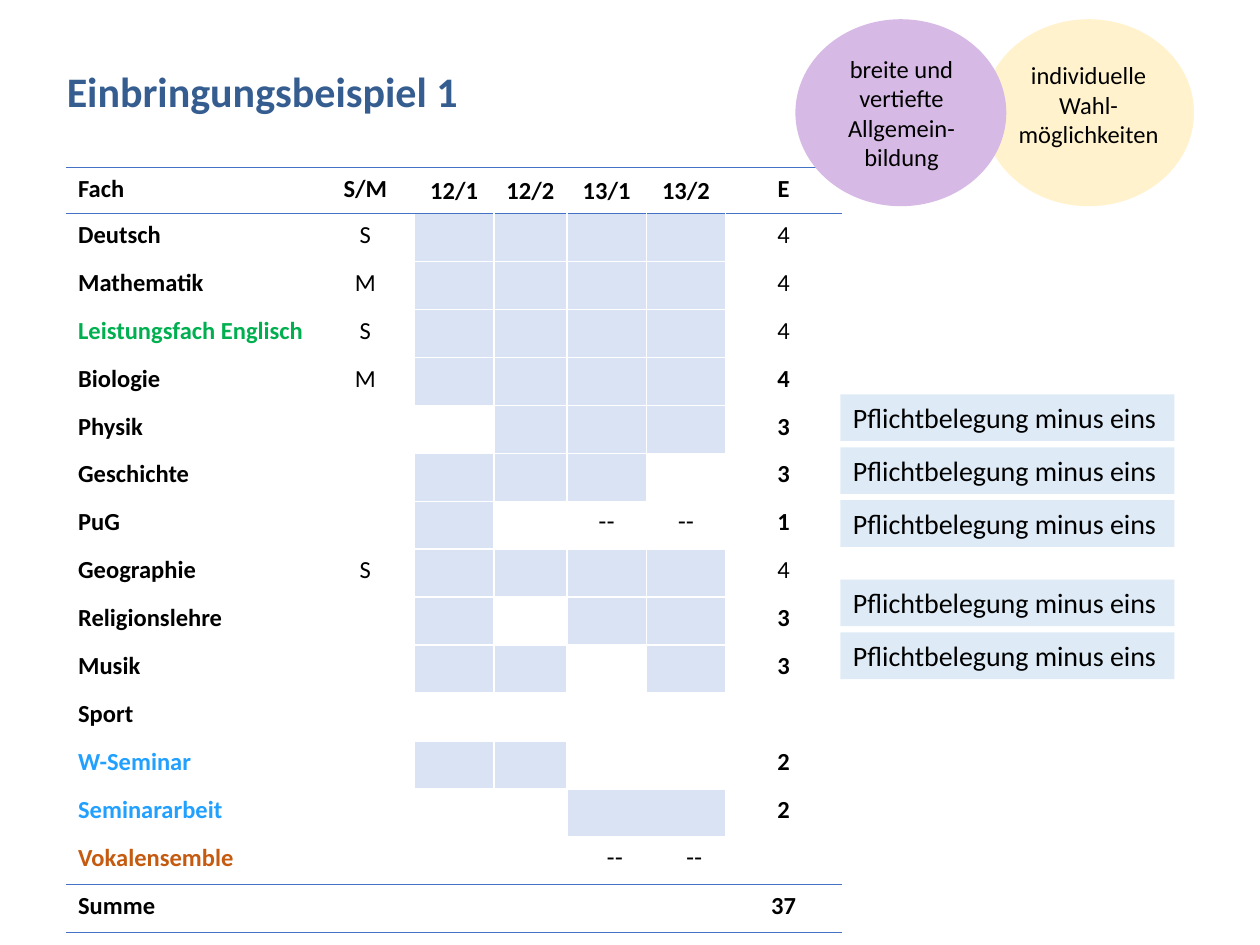
"""Build the slide that shows which school terms count in example 1."""
from dataclasses import dataclass

from lxml.etree import SubElement
from pptx import Presentation
from pptx.dml.color import RGBColor
from pptx.enum.shapes import MSO_SHAPE
from pptx.enum.text import MSO_ANCHOR, MSO_AUTO_SIZE, PP_ALIGN
from pptx.oxml.ns import qn
from pptx.util import Inches, Pt


@dataclass(frozen=True)
class Theme:
    face: str = "Calibri"
    dash_face: str = "Arial"
    title: str = "355D90"
    ink: str = "000000"
    rule: str = "4472C4"
    white: str = "FFFFFF"
    term: str = "DAE3F3"
    note: str = "DEEBF7"
    cream: str = "FFF2CC"
    lilac: str = "D7B9E5"
    green: str = "00B050"
    blue: str = "21A0FF"
    rust: str = "C55A11"
    title_size: int = 24
    note_size: int = 16
    size: int = 14


theme = Theme()


def write(frame, text, size=theme.size, color=theme.ink, bold=False,
          face=theme.face, align=PP_ALIGN.LEFT, anchor=MSO_ANCHOR.TOP):
    frame.word_wrap = True
    frame.vertical_anchor = anchor
    for i, line in enumerate(text.split("\n")):
        para = frame.add_paragraph() if i else frame.paragraphs[0]
        para.alignment = align
        run = para.add_run()
        run.text = line
        font = run.font
        font.name, font.size, font.bold = face, Pt(size), bold
        font.color.rgb = RGBColor.from_string(color)


def edge(cell, sides, color):
    props = cell._tc.get_or_add_tcPr()
    for side in sides:
        line = SubElement(props, qn(f"a:ln{side}"), w=str(Pt(1)))
        paint = SubElement(line, qn("a:solidFill"))
        SubElement(paint, qn("a:srgbClr"), val=color)


deck = Presentation()
deck.slide_width, deck.slide_height = Inches(10), Inches(7.5)
slide = deck.slides.add_slide(deck.slide_layouts[5])
shapes = slide.shapes

title = shapes.title
title.left, title.top = Inches(0.43), Inches(0.47)
title.width, title.height = Inches(9.37), Inches(0.87)
write(title.text_frame, "Einbringungsbeispiel 1", size=theme.title_size,
      color=theme.title, bold=True)
title.text_frame.auto_size = MSO_AUTO_SIZE.NONE

heads = ["Fach", "S/M", "12/1", "12/2", "13/1", "13/2", "", "E"]
rows = [
    ("Deutsch", "S", "xxxx", "4"),
    ("Mathematik", "M", "xxxx", "4"),
    ("Leistungsfach Englisch", "S", "xxxx", "4"),
    ("Biologie", "M", "xxxx", "4"),
    ("Physik", "", ".xxx", "3"),
    ("Geschichte", "", "xxx.", "3"),
    ("PuG", "", "x.--", "1"),
    ("Geographie", "S", "xxxx", "4"),
    ("Religionslehre", "", "x.xx", "3"),
    ("Musik", "", "xx.x", "3"),
    ("Sport", "", "....", ""),
    ("W-Seminar", "", "xx..", "2"),
    ("Seminararbeit", "", "..xx", "2"),
    ("Vokalensemble", "", "..--", ""),
    ("Summe", "", "", "37"),
]
hues = {"Leistungsfach Englisch": theme.green, "W-Seminar": theme.blue,
        "Seminararbeit": theme.blue, "Vokalensemble": theme.rust}
spans = {"W-Seminar": (4, 6), "Seminararbeit": (4, 6), "Vokalensemble": (4, 5)}
light = {"Deutsch", "Mathematik", "Leistungsfach Englisch", "Geographie"}
widths = [1.99, 0.78, 0.63, 0.58, 0.63, 0.13, 0.5, 0.92]
last = len(rows)

holder = shapes.add_table(last + 1, len(widths), Inches(0.52), Inches(1.33),
                          Inches(sum(widths)), Inches(5.87))
table = holder.table
table.first_row = table.horz_banding = False
table._tbl.tblPr.find(qn("a:tableStyleId")).text = (
    "{2D5ABB26-0587-4C30-8999-92F81FD0307C}")
for col, width in zip(table.columns, widths):
    col.width = Inches(width)

for r, row in enumerate(table.rows):
    row.height = Inches(5.87 / (last + 1))
    name, kind, terms, score = rows[r - 1] if r else ("Fach", "", "", "")
    start, end = spans.get(name, (5, 6))
    table.cell(r, start).merge(table.cell(r, end))
    for c, cell in enumerate(row.cells):
        text, fill = "", None
        look = {"align": PP_ALIGN.CENTER if c else PP_ALIGN.LEFT, "bold": True}
        if r in (0, last):
            edge(cell, "TB", theme.rule)
        elif 2 <= c <= 6:
            sides = "L" * (c > 2) + "R" * (c < 5) + "T" * (r > 1)
            edge(cell, sides + "B" * (r < last - 1), theme.white)
        if r == 0:
            text = heads[c]
            if 2 <= c <= 6:
                look["anchor"] = MSO_ANCHOR.MIDDLE
        elif c == 0:
            text = name
            look["color"] = hues.get(name, theme.ink)
        elif c == 1:
            text = kind
            look["bold"] = False
        elif c == 7:
            text = score
            look["bold"] = name not in light
        elif terms:
            mark = terms[min(c - 2, 3)]
            fill = theme.term if mark == "x" else theme.white
            if mark == "-" and not cell.is_spanned:
                text = "--"
                look.update(face=theme.dash_face, bold=False)
        write(cell.text_frame, text, **{k: v for k, v in look.items() if k != "anchor"})
        cell.vertical_anchor = look.get("anchor", MSO_ANCHOR.TOP)
        if fill:
            cell.fill.solid()
            cell.fill.fore_color.rgb = RGBColor.from_string(fill)
        else:
            cell.fill.background()

goals = [
    (7.81, theme.cream, "individuelle\nWahl-\nmöglichkeiten", (7.93, 0.43, 1.42, 0.81)),
    (6.32, theme.lilac, "breite und vertiefte Allgemein-bildung", (6.5, 0.38, 1.31, 1.04)),
]
for left, color, text, place in goals:
    disc = shapes.add_shape(MSO_SHAPE.OVAL, Inches(left), Inches(0.16),
                            Inches(1.66), Inches(1.47))
    disc.shadow.inherit = False
    disc.fill.solid()
    disc.fill.fore_color.rgb = RGBColor.from_string(color)
    disc.line.color.rgb = RGBColor.from_string(color)
    disc.line.width = Pt(1)
    label = shapes.add_textbox(*map(Inches, place))
    write(label.text_frame, text, align=PP_ALIGN.CENTER)

for top in (3.13, 3.55, 3.97, 4.6, 5.02):
    note = shapes.add_shape(MSO_SHAPE.RECTANGLE, Inches(6.67), Inches(top),
                            Inches(2.65), Inches(0.37))
    note.shadow.inherit = False
    note.fill.solid()
    note.fill.fore_color.rgb = RGBColor.from_string(theme.note)
    note.line.fill.background()
    write(note.text_frame, "Pflichtbelegung minus eins", size=theme.note_size)

deck.save("out.pptx")
